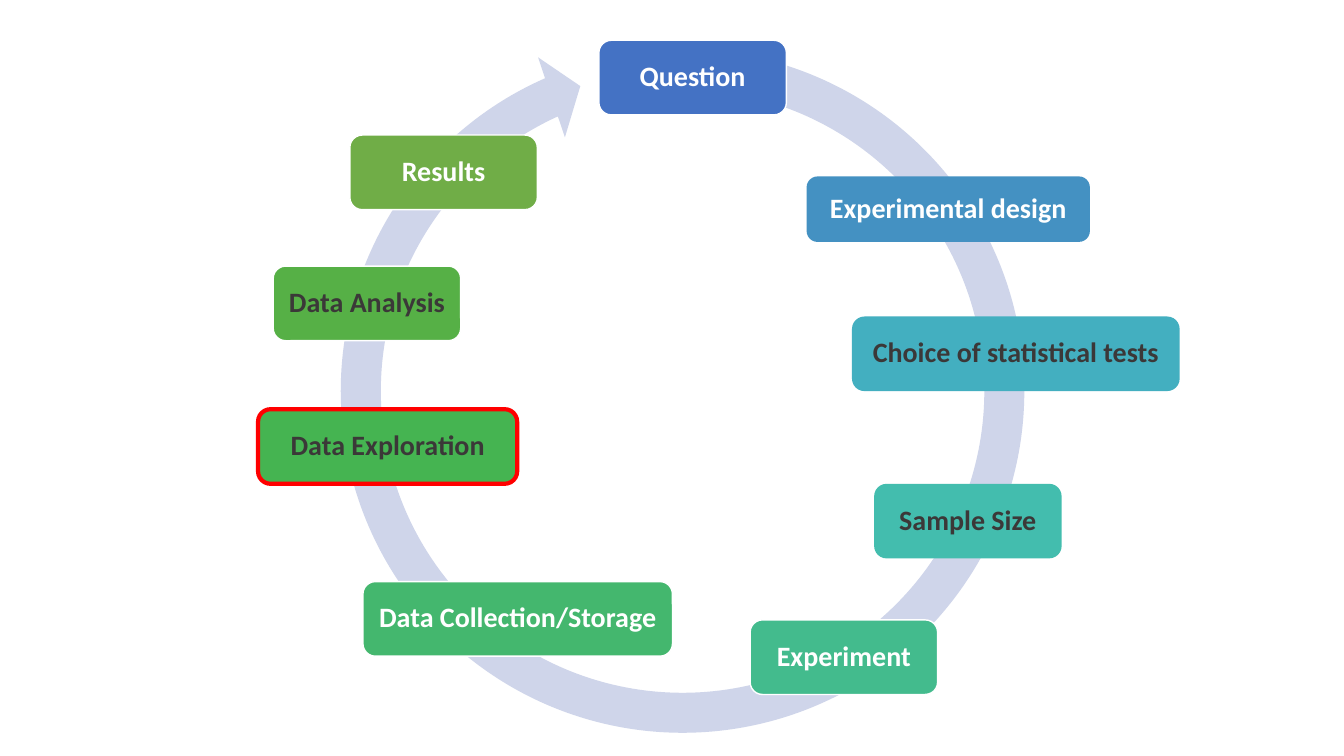
from dataclasses import dataclass

from pptx import Presentation
from pptx.dml.color import RGBColor
from pptx.enum.shapes import MSO_SHAPE
from pptx.enum.text import MSO_ANCHOR, PP_ALIGN
from pptx.util import Inches, Pt

ROUNDED = MSO_SHAPE.ROUNDED_RECTANGLE
CIRCULAR_ARROW = MSO_SHAPE.CIRCULAR_ARROW
MIDDLE = MSO_ANCHOR.MIDDLE
CENTER = PP_ALIGN.CENTER


@dataclass(frozen=True)
class Theme:
    font: str = "Calibri"
    label_size: int = 20
    light: str = "FFFFFF"
    dark: str = "3B3838"
    highlight: str = "FF0000"
    ring: str = "CFD5EA"
    question: str = "4472C4"
    design: str = "4491C2"
    tests: str = "43AFC0"
    sample: str = "43BDAE"
    experiment: str = "43BB8D"
    collection: str = "44B76E"
    exploration: str = "45B451"
    analysis: str = "56B046"
    results: str = "70AD47"


THEME = Theme()
STEP_WIDTH = 1.86
STEP_HEIGHT = 0.74
THIN = (THEME.light, 1)
THICK = (THEME.highlight, 3)

STEPS = [
    ("Question", 5.94, 0.4, STEP_WIDTH, STEP_HEIGHT, THEME.question, THEME.light, THIN),
    ("Experimental design", 8, 1.75, 2.81, 0.65, THEME.design, THEME.light, None),
    ("Choice of statistical tests", 8.45, 3.14, 3.25, STEP_HEIGHT, THEME.tests, THEME.dark, None),
    ("Sample Size", 8.67, 4.8, STEP_WIDTH, STEP_HEIGHT, THEME.sample, THEME.dark, None),
    ("Experiment", 7.44, 6.15, STEP_WIDTH, STEP_HEIGHT, THEME.experiment, THEME.light, THIN),
    ("Data Collection/Storage", 3.6, 5.77, 3.07, STEP_HEIGHT, THEME.collection, THEME.light, THIN),
    ("Data Exploration", 2.56, 4.06, 2.57, STEP_HEIGHT, THEME.exploration, THEME.dark, THICK),
    ("Data Analysis", 2.71, 2.64, STEP_WIDTH, STEP_HEIGHT, THEME.analysis, THEME.dark, THIN),
    ("Results", 3.47, 1.34, STEP_WIDTH, STEP_HEIGHT, THEME.results, THEME.light, THIN),
]


class CyclePage:
    def __init__(self, page, theme):
        self.page = page
        self.theme = theme

    def shape(self, kind, left, top, width, height, fill, line=None):
        shape = self.page.shapes.add_shape(
            kind, Inches(left), Inches(top), Inches(width), Inches(height)
        )
        shape.shadow.inherit = False
        shape.fill.solid()
        shape.fill.fore_color.rgb = RGBColor.from_string(fill)
        if line is None:
            shape.line.fill.background()
        else:
            color, weight = line
            shape.line.color.rgb = RGBColor.from_string(color)
            shape.line.width = Pt(weight)
        return shape

    def ring(self, left, top, size):
        ring = self.shape(CIRCULAR_ARROW, left, top, size, size, self.theme.ring)
        for index, value in enumerate((0.055, 3.307, 147.574, 168.131, 0.058)):
            ring.adjustments[index] = value

    def step(self, label, left, top, width, height, fill, color, line):
        box = self.shape(ROUNDED, left, top, width, height, fill, line)
        frame = box.text_frame
        frame.word_wrap = True
        frame.vertical_anchor = MIDDLE
        frame.margin_left = frame.margin_right = Inches(0.08)
        frame.margin_top = frame.margin_bottom = Inches(0.08)
        para = frame.paragraphs[0]
        para.alignment = CENTER
        para.line_spacing = 0.9
        span = para.add_run()
        span.text = label
        span.font.name = self.theme.font
        span.font.size = Pt(self.theme.label_size)
        span.font.bold = True
        span.font.color.rgb = RGBColor.from_string(color)


def main():
    deck = Presentation()
    deck.slide_width = Inches(13.33)
    deck.slide_height = Inches(7.5)
    cycle = CyclePage(deck.slides.add_slide(deck.slide_layouts[6]), THEME)
    cycle.ring(3.16, 0.27, 7.22)
    for step in STEPS:
        cycle.step(*step)
    deck.save("out.pptx")


if __name__ == "__main__":
    main()
